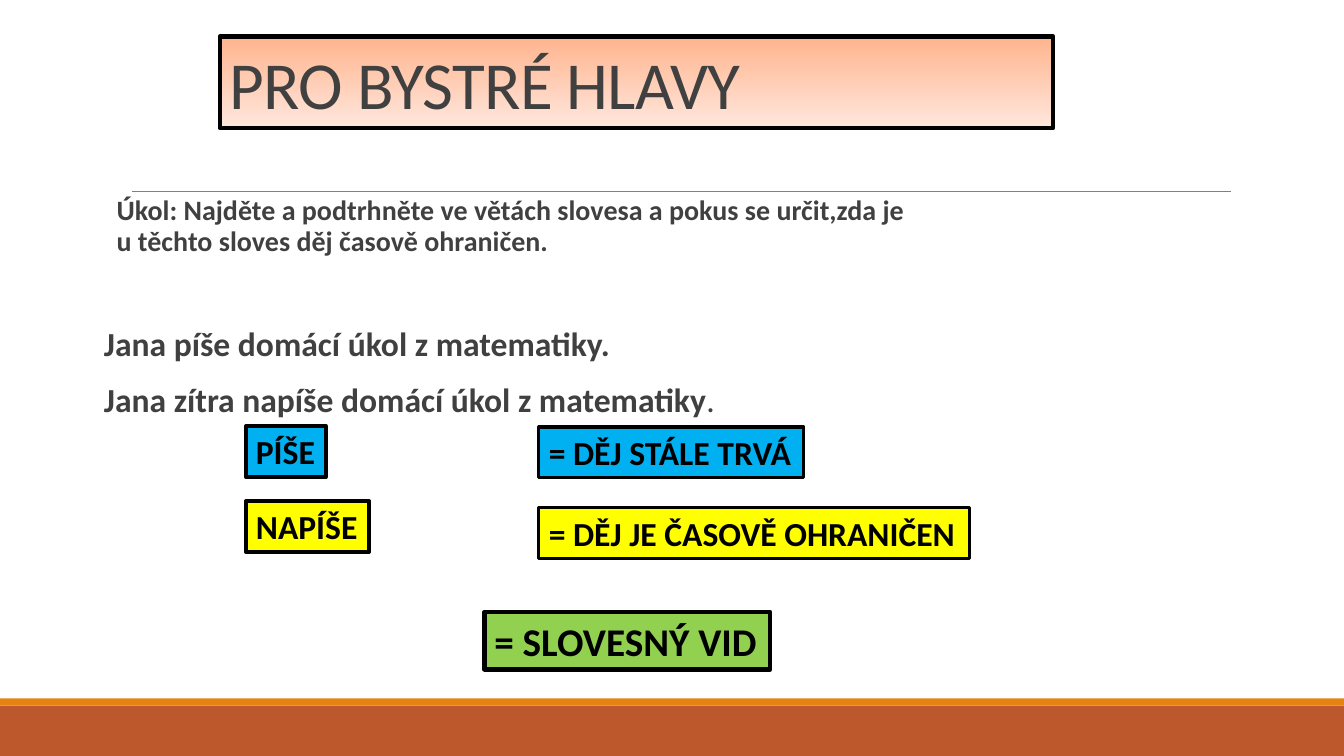
from dataclasses import dataclass

from lxml.etree import SubElement
from pptx import Presentation
from pptx.dml.color import RGBColor
from pptx.enum.shapes import MSO_CONNECTOR, MSO_SHAPE
from pptx.enum.text import MSO_ANCHOR, MSO_AUTO_SIZE, PP_ALIGN
from pptx.oxml.ns import qn
from pptx.util import Cm, Pt


@dataclass(frozen=True)
class Theme:
    """Colours, font and type sizes of the slide."""
    font: str = "Calibri"
    ink: str = "404040"
    black: str = "000000"
    rule: str = "808080"
    rust: str = "BD582C"
    orange: str = "E48312"
    peach: tuple = ("FFB48E", "FFE7DD")
    blue: str = "00B0F0"
    yellow: str = "FFFF00"
    green: str = "92D050"
    title: int = 48
    result: int = 28
    example: int = 24
    task: int = 20


class Deck:
    """Draws styled elements on the current slide."""

    def __init__(self, prs, theme):
        self.theme = theme
        self.s = prs.slides.add_slide(prs.slide_layouts[6])

    def font(self, p, size, color, bold=True):
        """Apply the theme font to a paragraph."""
        f = p.font
        f.name, f.size, f.bold = self.theme.font, Pt(size), bold
        f.color.rgb = RGBColor.from_string(color)

    def rect(self, x, y, w, h, fill, line=None):
        """Add a rectangle; a pair of fill colours makes a vertical gradient."""
        sp = self.s.shapes.add_shape(MSO_SHAPE.RECTANGLE, Cm(x), Cm(y), Cm(w), Cm(h))
        sp.shadow.inherit = False
        if isinstance(fill, tuple):
            sp.fill.gradient()
            sp.fill.gradient_angle = 270
            for stop, color, position in zip(sp.fill.gradient_stops, fill, (0, 1)):
                stop.color.rgb = RGBColor.from_string(color)
                stop.position = position
        else:
            sp.fill.solid()
            sp.fill.fore_color.rgb = RGBColor.from_string(fill)
        if line:
            sp.line.width = Pt(line)
            sp.line.color.rgb = RGBColor.from_string(self.theme.black)
        else:
            sp.line.fill.background()
        return sp

    def rule(self, x1, x2, y):
        """Add a thin horizontal line."""
        line = self.s.shapes.add_connector(MSO_CONNECTOR.STRAIGHT, Cm(x1), Cm(y), Cm(x2), Cm(y))
        line.line.width = Pt(0.5)
        line.line.color.rgb = RGBColor.from_string(self.theme.rule)
        SubElement(line._element.spPr, qn("a:effectLst"))

    def title(self, text, x, y, w, h):
        """Add the framed title."""
        tf = self.rect(x, y, w, h, self.theme.peach, 3).text_frame
        tf.word_wrap, tf.vertical_anchor = True, MSO_ANCHOR.BOTTOM
        p = tf.paragraphs[0]
        p.alignment, p.line_spacing = PP_ALIGN.LEFT, 0.85
        r = p.add_run()
        r.text = text
        r._r.get_or_add_rPr().set("spc", "-50")
        self.font(p, self.theme.title, self.theme.ink, False)

    def label(self, text, x, y, w, h, fill, line, size):
        """Add a framed label that fits its text."""
        tf = self.rect(x, y, w, h, fill, line).text_frame
        tf.word_wrap, tf.vertical_anchor = False, MSO_ANCHOR.TOP
        tf.auto_size = MSO_AUTO_SIZE.SHAPE_TO_FIT_TEXT
        p = tf.paragraphs[0]
        p.alignment = PP_ALIGN.LEFT
        p.add_run().text = text
        self.font(p, size, self.theme.black)

    def body(self, x, y, w, h, paragraphs):
        """Add text from rows of text, plain ending, size, indent and space before."""
        tf = self.s.shapes.add_textbox(Cm(x), Cm(y), Cm(w), Cm(h)).text_frame
        tf.word_wrap = True
        tf.margin_left = tf.margin_right = 0
        for i, (text, ending, size, indent, before) in enumerate(paragraphs):
            p = tf.add_paragraph() if i else tf.paragraphs[0]
            p.line_spacing, p.space_before, p.space_after = 0.9, Pt(before), Pt(2)
            p._p.get_or_add_pPr().set("marL", str(Cm(indent)))
            p.add_run().text = text
            if ending:
                r = p.add_run()
                r.text = ending
                r.font.bold = False
            self.font(p, size, self.theme.ink)


def main():
    """Build and save the slide."""
    prs = Presentation()
    prs.slide_width, prs.slide_height = Cm(33.87), Cm(19.05)
    t = Theme()
    deck = Deck(prs, t)
    deck.rect(0, 17.78, 33.87, 1.27, t.rust)
    deck.rect(0, 17.6, 33.87, 0.18, t.orange)
    deck.rule(3.33, 31.01, 4.82)
    deck.title("PRO BYSTRÉ HLAVY", 5.54, 0.92, 21, 2.31)
    deck.body(1.98, 4.83, 21.16, 7, [
        ("Úkol: Najděte a podtrhněte ve větách slovesa a pokus se určit,zda je "
         "u těchto sloves děj časově ohraničen.", "", t.task, 0.96, 12),
        ("Jana píše domácí úkol z matematiky.", "", t.example, 0.64, 48),
        ("Jana zítra napíše domácí úkol z matematiky", ".", t.example, 0.64, 12),
    ])
    verb_x, meaning_x = 6.2, 13.58
    for text, x, y, w, fill, line in [
        ("PÍŠE", verb_x, 10.74, 2.01, t.blue, 3),
        ("NAPÍŠE", verb_x, 12.63, 3.1, t.yellow, 3),
        ("= DĚJ STÁLE TRVÁ", meaning_x, 10.76, 6.68, t.blue, 2.25),
        ("= DĚJ JE ČASOVĚ OHRANIČEN", meaning_x, 12.79, 10.85, t.yellow, 2.25),
    ]:
        deck.label(text, x, y, w, 1.28, fill, line, t.example)
    deck.label("= SLOVESNÝ VID", 12.21, 15.42, 7.2, 1.45, t.green, 3, t.result)
    prs.save("out.pptx")


if __name__ == "__main__":
    main()
